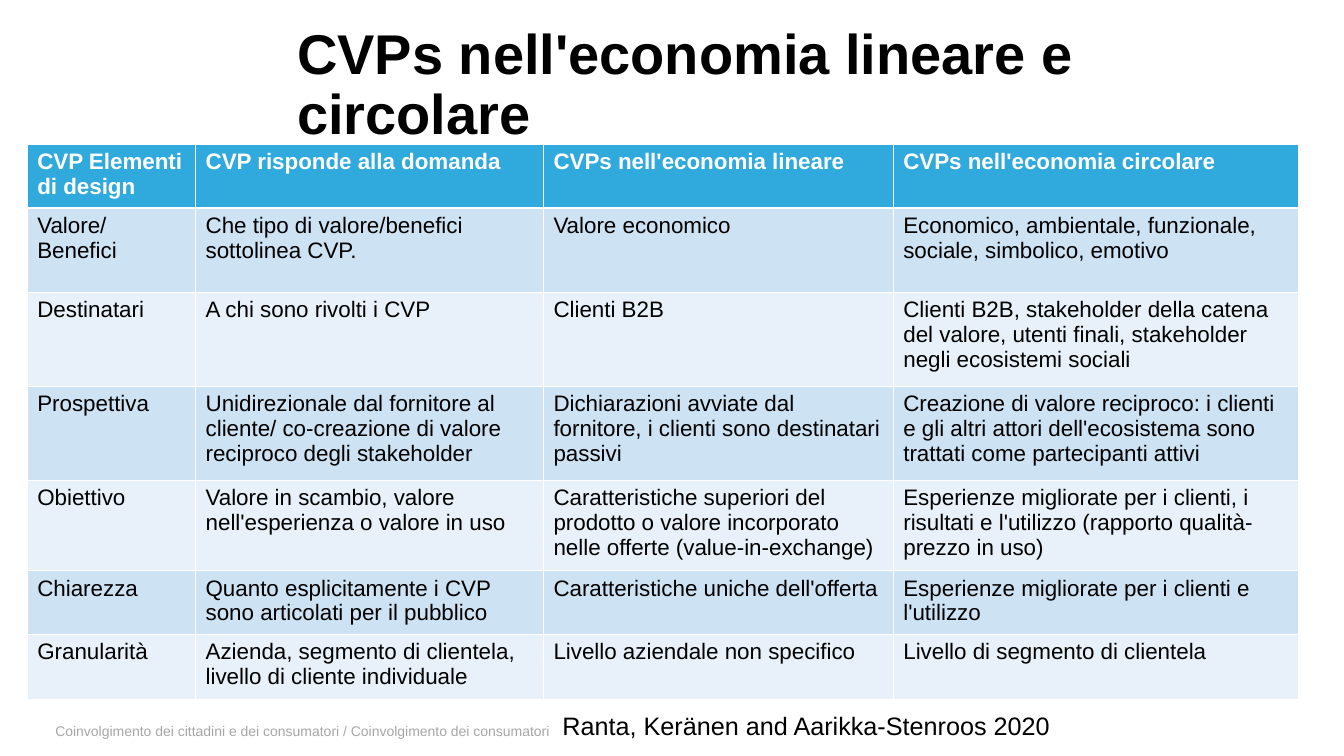
from pptx import Presentation
from pptx.dml.color import RGBColor
from pptx.enum.text import MSO_ANCHOR
from pptx.util import Inches, Pt

TOP, BOTTOM = MSO_ANCHOR.TOP, MSO_ANCHOR.BOTTOM
FONT = "Arial"
COLORS = {
    "text": "000000",
    "footer": "A6A6A6",
    "header_text": "FFFFFF",
    "header": "30A9DD",
    "band_dark": "CDE2F2",
    "band_light": "E8F1F9",
}

prs = Presentation()
prs.slide_width, prs.slide_height = Inches(13.33), Inches(7.5)
slide = prs.slides.add_slide(prs.slide_layouts[6])


def style_text(frame, size, color, bold=False):
    for paragraph in frame.paragraphs:
        for run in paragraph.runs:
            run.font.name = FONT
            run.font.size = Pt(size)
            run.font.bold = bold
            run.font.color.rgb = RGBColor.from_string(COLORS[color])


def add_text(text, left, top, width, height, size, color, bold=False, anchor=TOP):
    frame = slide.shapes.add_textbox(
        Inches(left), Inches(top), Inches(width), Inches(height)).text_frame
    frame.word_wrap = True
    frame.vertical_anchor = anchor
    frame.text = text
    style_text(frame, size, color, bold)
    return frame


# Title
title = add_text("CVPs nell'economia lineare e circolare",
                 2.85, 0.21, 10.03, 0.71, 40, "text", bold=True)
title.paragraphs[0].line_spacing = 0.9

# Footer
add_text("Coinvolgimento dei cittadini e dei consumatori / Coinvolgimento dei consumatori",
         0.45, 7.1, 7.41, 0.28, 10, "footer", anchor=BOTTOM)

# Comparison table
comparison = [
    ["CVP Elementi di design", "CVP risponde alla domanda",
     "CVPs nell'economia lineare", "CVPs nell'economia circolare"],
    ["Valore/\vBenefici", "Che tipo di valore/benefici sottolinea CVP.",
     "Valore economico",
     "Economico, ambientale, funzionale, sociale, simbolico, emotivo"],
    ["Destinatari", "A chi sono rivolti i CVP", "Clienti B2B",
     "Clienti B2B, stakeholder della catena del valore, utenti finali, "
     "stakeholder negli ecosistemi sociali"],
    ["Prospettiva",
     "Unidirezionale dal fornitore al cliente/ co-creazione di valore "
     "reciproco degli stakeholder",
     "Dichiarazioni avviate dal fornitore, i clienti sono destinatari passivi",
     "Creazione di valore reciproco: i clienti e gli altri attori "
     "dell'ecosistema sono trattati come partecipanti attivi"],
    ["Obiettivo", "Valore in scambio, valore nell'esperienza o valore in uso",
     "Caratteristiche superiori del prodotto o valore incorporato nelle "
     "offerte (value-in-exchange)",
     "Esperienze migliorate per i clienti, i risultati e l'utilizzo "
     "(rapporto qualità-prezzo in uso)"],
    ["Chiarezza", "Quanto esplicitamente i CVP sono articolati per il pubblico",
     "Caratteristiche uniche dell'offerta",
     "Esperienze migliorate per i clienti e l'utilizzo"],
    ["Granularità", "Azienda, segmento di clientela, livello di cliente individuale",
     "Livello aziendale non specifico", "Livello di segmento di clientela"],
]
column_widths = [1.67, 3.45, 3.47, 4.02]
row_heights = [0.59, 0.84, 0.93, 0.93, 0.84, 0.59, 0.64]

table = slide.shapes.add_table(
    len(row_heights), len(column_widths), Inches(0.27), Inches(1.43),
    Inches(sum(column_widths)), Inches(sum(row_heights))).table
for column, width in zip(table.columns, column_widths):
    column.width = Inches(width)

for row_index, (row, height, texts) in enumerate(zip(table.rows, row_heights, comparison)):
    row.height = Inches(height)
    is_header = row_index == 0
    band = "header" if is_header else "band_dark" if row_index % 2 else "band_light"
    for cell, text in zip(row.cells, texts):
        cell.fill.solid()
        cell.fill.fore_color.rgb = RGBColor.from_string(COLORS[band])
        cell.text_frame.text = text
        style_text(cell.text_frame, 16, "header_text" if is_header else "text", is_header)

# Citation
add_text("Ranta, Keränen and Aarikka-Stenroos 2020", 5.48, 7, 5.26, 0.4, 18, "text")

prs.save("out.pptx")
